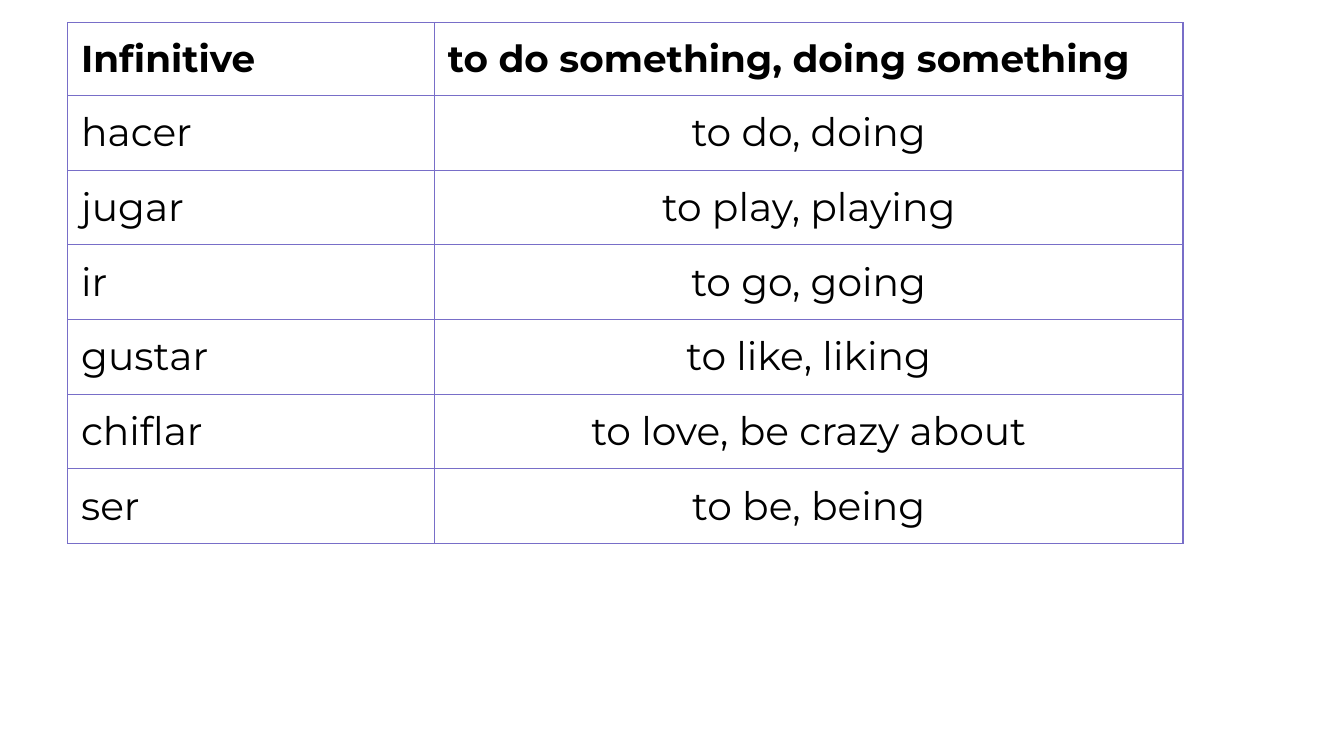
"""Build a slide with a table of Spanish infinitives and their English meanings."""
import pptx
import pptx.dml.color
import pptx.enum.text
import pptx.oxml
import pptx.oxml.ns
import pptx.util

Pt = pptx.util.Pt
BLACK = pptx.dml.color.RGBColor(0x00, 0x00, 0x00)
PURPLE = pptx.dml.color.RGBColor(0x78, 0x6E, 0xC8)

VERBS = [
    ("Infinitive", "to do something, doing something"),
    ("hacer", "to do, doing"),
    ("jugar", "to play, playing"),
    ("ir", "to go, going"),
    ("gustar", "to like, liking"),
    ("chiflar", "to love, be crazy about"),
    ("ser", "to be, being"),
]
COLUMN_WIDTHS = [196.5, 401]
ROW_HEIGHT = 38.2
PADDING = Pt(7.2)


def add_borders(cell):
    properties = cell._tc.get_or_add_tcPr()
    for side in ("lnL", "lnR", "lnT", "lnB"):
        properties.append(pptx.oxml.parse_xml(
            f'<a:{side} {pptx.oxml.ns.nsdecls("a")} w="{Pt(0.75)}">'
            f'<a:solidFill><a:srgbClr val="{PURPLE}"/></a:solidFill></a:{side}>'
        ))


presentation = pptx.Presentation()
presentation.slide_width = Pt(720)
presentation.slide_height = Pt(405)
slide = presentation.slides.add_slide(presentation.slide_layouts[6])

verb_table = slide.shapes.add_table(
    len(VERBS), len(COLUMN_WIDTHS), Pt(36.25), Pt(12.25),
    Pt(sum(COLUMN_WIDTHS)), Pt(ROW_HEIGHT * len(VERBS)),
).table
verb_table.first_row = False
verb_table.horz_banding = False
for column, width in zip(verb_table.columns, COLUMN_WIDTHS):
    column.width = Pt(width)

for row_index, entry in enumerate(VERBS):
    is_header = row_index == 0
    verb_table.rows[row_index].height = Pt(ROW_HEIGHT)
    for column_index, wording in enumerate(entry):
        cell = verb_table.cell(row_index, column_index)
        add_borders(cell)
        cell.fill.background()
        cell.margin_left = cell.margin_right = PADDING
        cell.margin_top = cell.margin_bottom = PADDING
        paragraph = cell.text_frame.paragraphs[0]
        if column_index == 1 and not is_header:
            paragraph.alignment = pptx.enum.text.PP_ALIGN.CENTER
        run = paragraph.add_run()
        run.text = wording
        run.font.name = "Montserrat"
        run.font.size = Pt(20 if is_header else 21)
        run.font.bold = is_header
        run.font.color.rgb = BLACK

presentation.save("out.pptx")
